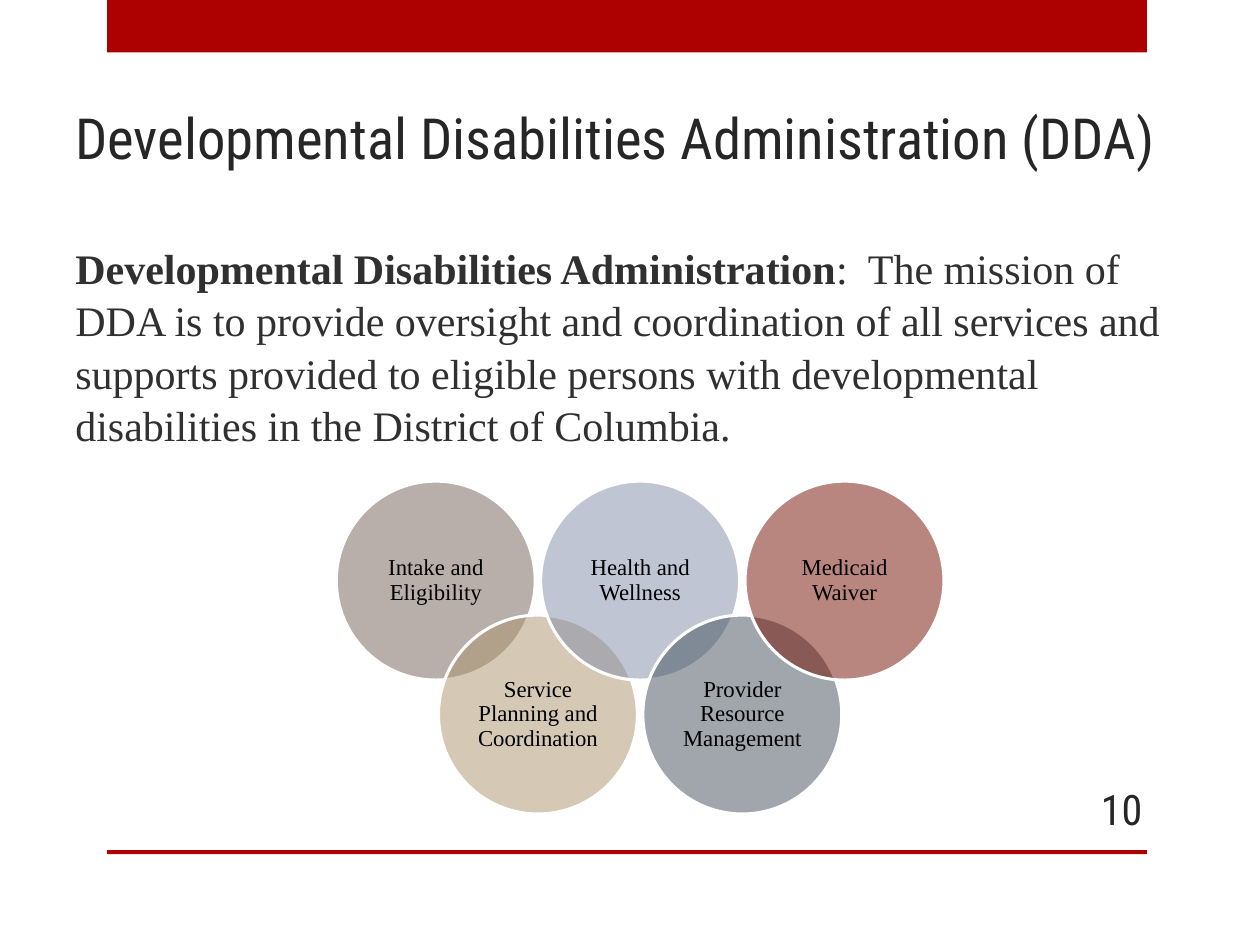
from dataclasses import dataclass

from lxml.etree import SubElement
from pptx import Presentation
from pptx.dml.color import RGBColor
from pptx.enum.shapes import MSO_SHAPE
from pptx.enum.text import MSO_ANCHOR, PP_ALIGN
from pptx.oxml.ns import qn
from pptx.util import Cm, Pt

COLORS = {
    "accent": "AD0101",
    "heading": "262626",
    "body": "303030",
    "label": "000000",
    "outline": "FFFFFF",
    "intake": "726056",
    "planning": "AC956E",
    "health": "808DA9",
    "provider": "424E5B",
    "waiver": "730E00",
}
HEADING_FONT = "Roboto Condensed"
BODY_FONT = "Times New Roman"

# Circle chain geometry in cm: a zigzag with equal steps
DIAMETER = 4.01
FIRST_LEFT = 6.78
STEP = 2.06
ROW_TOPS = (9.7, 12.4)


@dataclass
class Box:
    left: float
    top: float
    width: float
    height: float

    def lengths(self) -> tuple:
        return Cm(self.left), Cm(self.top), Cm(self.width), Cm(self.height)


@dataclass
class Service:
    label: str
    color: str


SERVICES = [
    Service("Intake and Eligibility", "intake"),
    Service("Service Planning and Coordination", "planning"),
    Service("Health and Wellness", "health"),
    Service("Provider Resource Management", "provider"),
    Service("Medicaid Waiver", "waiver"),
]


def rgb(name: str) -> RGBColor:
    return RGBColor.from_string(COLORS[name])


def add_run(p, text: str, size: float, font: str, color: str, bold=False):
    r = p.add_run()
    r.text = text
    r.font.size = Pt(size)
    r.font.name = font
    r.font.bold = bold
    r.font.color.rgb = rgb(color)


def add_filled(slide, kind, box: Box, color: str):
    sp = slide.shapes.add_shape(kind, *box.lengths())
    sp.shadow.inherit = False
    sp.fill.solid()
    sp.fill.fore_color.rgb = rgb(color)
    sp.line.fill.background()
    return sp


def add_text(slide, box: Box, anchor, align=PP_ALIGN.LEFT):
    tf = slide.shapes.add_textbox(*box.lengths()).text_frame
    tf.word_wrap = True
    tf.vertical_anchor = anchor
    p = tf.paragraphs[0]
    p.alignment = align
    return tf, p


def add_circle(slide, index: int, service: Service):
    box = Box(FIRST_LEFT + index * STEP, ROW_TOPS[index % 2], DIAMETER, DIAMETER)
    sp = add_filled(slide, MSO_SHAPE.OVAL, box, service.color)
    sp.line.color.rgb = rgb("outline")
    sp.line.width = Pt(1.75)
    # Half-transparent fill
    srgb = sp.fill._xPr.find(qn("a:solidFill")).find(qn("a:srgbClr"))
    SubElement(srgb, qn("a:alpha")).set("val", "50000")

    tf = sp.text_frame
    tf.word_wrap = True
    tf.vertical_anchor = MSO_ANCHOR.MIDDLE
    tf.margin_left = tf.margin_right = tf.margin_top = tf.margin_bottom = Cm(0.12)
    p = tf.paragraphs[0]
    p.alignment = PP_ALIGN.CENTER
    p.line_spacing = 0.9
    add_run(p, service.label, 13, BODY_FONT, "label")


def main():
    prs = Presentation()
    prs.slide_width, prs.slide_height = Cm(25.4), Cm(19.05)
    slide = prs.slides.add_slide(prs.slide_layouts[6])

    # Top band and bottom rule
    for top, height in ((0, 1.06), (17.14, 0.08)):
        add_filled(slide, MSO_SHAPE.RECTANGLE, Box(2.16, top, 20.96, height), "accent")

    # Title
    _, p = add_text(slide, Box(1.27, 0.76, 23.29, 2.82), MSO_ANCHOR.BOTTOM)
    add_run(p, "Developmental Disabilities Administration (DDA)", 32.4,
            HEADING_FONT, "heading")

    # Mission statement
    tf, p = add_text(slide, Box(1.27, 4.65, 22.86, 12.06), MSO_ANCHOR.TOP)
    tf.margin_top = Cm(0.2)
    p.line_spacing = 1.04
    add_run(p, "Developmental Disabilities Administration", 24, BODY_FONT, "body", True)
    add_run(p, ":  The mission of DDA is to provide oversight and coordination of all "
               "services and supports provided to eligible persons with developmental "
               "disabilities in the District of Columbia.", 24, BODY_FONT, "body")

    # Slide number
    _, p = add_text(slide, Box(21.16, 15.8, 2.12, 1.02), MSO_ANCHOR.MIDDLE,
                    PP_ALIGN.RIGHT)
    add_run(p, "10", 24, HEADING_FONT, "heading")

    # Overlapping service circles
    for index, service in enumerate(SERVICES):
        add_circle(slide, index, service)

    prs.save("out.pptx")


if __name__ == "__main__":
    main()
